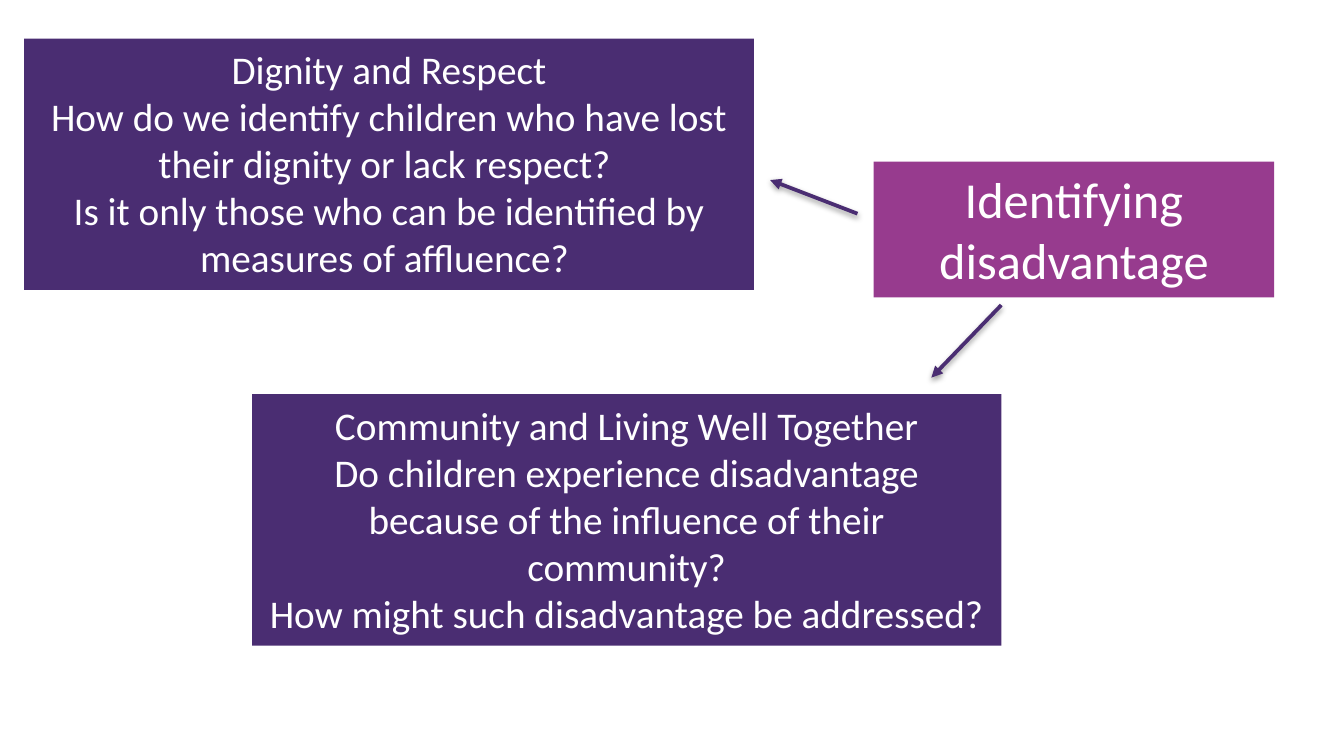
from lxml.etree import SubElement
from pptx import Presentation
from pptx.dml.color import RGBColor
from pptx.enum.shapes import MSO_CONNECTOR as Connector, MSO_SHAPE as Shape
from pptx.enum.text import MSO_ANCHOR as Anchor, MSO_AUTO_SIZE as AutoSize, PP_ALIGN as Align
from pptx.oxml import parse_xml
from pptx.oxml.ns import nsdecls, qn
from pptx.util import Inches, Pt

PURPLE, MAGENTA, WHITE = "4A2D72", "973B8E", "FFFFFF"


def color(value):
    return RGBColor.from_string(value)


deck = Presentation()
deck.slide_width = Inches(10)
deck.slide_height = deck.slide_width * 9 // 16
slide = deck.slides.add_slide(deck.slide_layouts[6])
cell = deck.slide_width / 100


def grid(*counts):
    return [round(count * cell) for count in counts]


topics = [
    ((65, 12.03, 29.8, 10.1), MAGENTA, 27, ["Identifying disadvantage"]),
    ((1.8, 2.87, 54.3, 18.7), PURPLE, 21, [
        "Dignity and Respect",
        "How do we identify children who have lost their dignity or lack respect? ",
        "Is it only those who can be identified by measures of affluence? ",
    ]),
    ((18.75, 29.34, 55.75, 18.7), PURPLE, 21, [
        "Community and Living Well Together",
        "Do children experience disadvantage because of the influence of their community?",
        "How might such disadvantage be addressed?",
    ]),
]
for place, fill, size, lines in topics:
    topic = slide.shapes.add_shape(Shape.RECTANGLE, *grid(*place))
    topic.shadow.inherit = False
    topic.fill.solid()
    topic.fill.fore_color.rgb = color(fill)
    topic.line.fill.background()
    wording = topic.text_frame
    wording.word_wrap = True
    wording.auto_size = AutoSize.SHAPE_TO_FIT_TEXT
    wording.vertical_anchor = Anchor.TOP
    wording.text = "\n".join(lines)
    for paragraph in wording.paragraphs:
        paragraph.alignment = Align.CENTER
        paragraph.font.name = "Calibri"
        paragraph.font.size = Pt(size)
        paragraph.font.color.rgb = color(WHITE)

for ends in [(63.8, 15.9, 57.3, 13.4), (74.5, 22.7, 69.3, 28.1)]:
    arrow = slide.shapes.add_connector(Connector.STRAIGHT, *grid(*ends))
    arrow.line.color.rgb = color(PURPLE)
    arrow.line.width = Pt(2)
    properties = arrow._element.spPr
    SubElement(properties.find(qn("a:ln")), qn("a:tailEnd"), type="triangle")
    properties.append(parse_xml(
        f'<a:effectLst {nsdecls("a")}>'
        f'<a:outerShdw blurRad="{Pt(3.1)}" dist="{Pt(1.6)}" dir="5400000" rotWithShape="0">'
        '<a:srgbClr val="000000"><a:alpha val="38000"/></a:srgbClr>'
        '</a:outerShdw></a:effectLst>'
    ))

deck.save("out.pptx")
